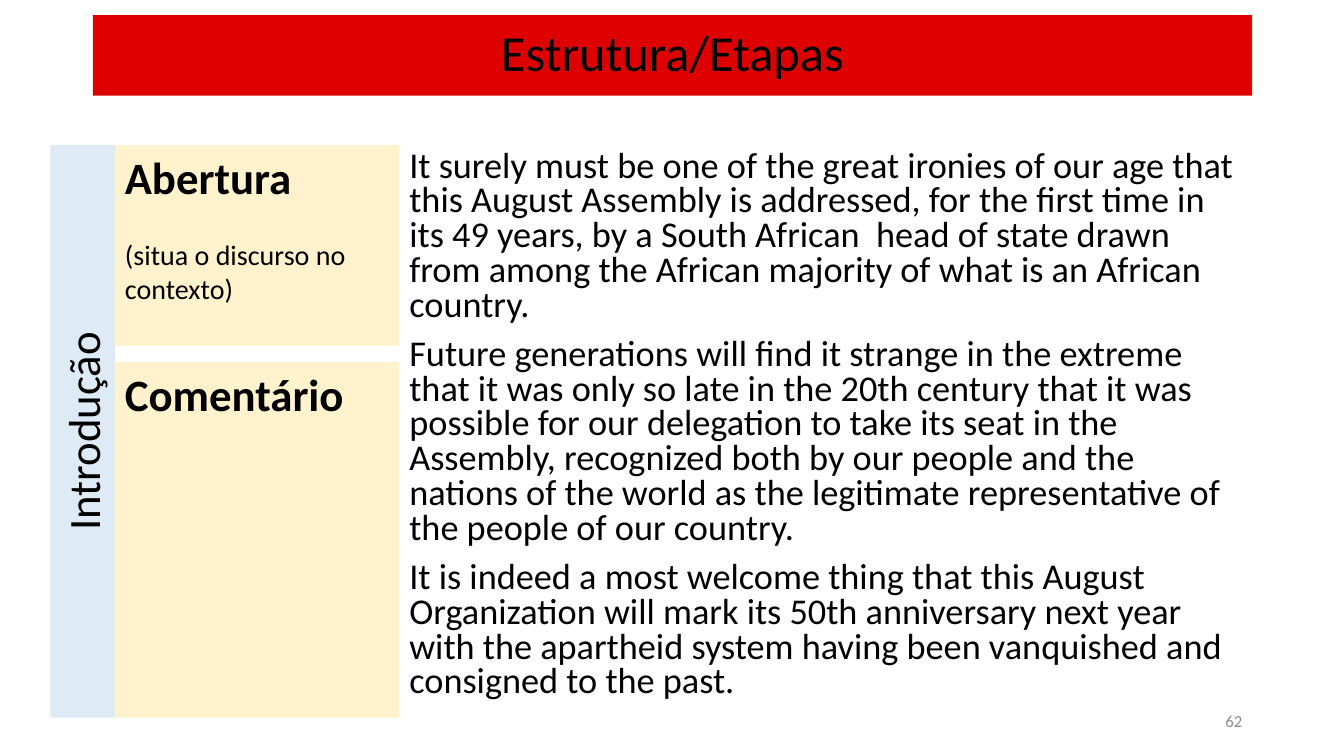
from lxml.etree import SubElement
from pptx import Presentation
from pptx.dml.color import RGBColor
from pptx.enum.shapes import MSO_SHAPE
from pptx.enum.text import MSO_ANCHOR, MSO_AUTO_SIZE, PP_ALIGN
from pptx.oxml.ns import qn
from pptx.util import Pt

PX = 9144  # EMU per px, 100 px to the inch
BLACK = RGBColor(0x00, 0x00, 0x00)
GREY = RGBColor(0x8C, 0x8C, 0x8C)
RED = RGBColor(0xDE, 0x00, 0x00)
PALE_BLUE = RGBColor(0xDE, 0xEB, 0xF7)
CREAM = RGBColor(0xFF, 0xF2, 0xCC)

SPEECH = [
    "It surely must be one of the great ironies of our age that this August "
    "Assembly is addressed, for the first time in its 49 years, by a South "
    "African  head of state drawn from among the African majority of what is "
    "an African country.",
    "Future generations will find it strange in the extreme that it was only "
    "so late in the 20th century that it was possible for our delegation to "
    "take its seat in the Assembly, recognized both by our people and the "
    "nations of the world as the legitimate representative of the people of "
    "our country.",
    "It is indeed a most welcome thing that this August Organization will "
    "mark its 50th anniversary next year with the apartheid system having "
    "been vanquished and consigned to the past.",
]


def write(paragraph, text, size=32, color=BLACK, bold=False,
          align=PP_ALIGN.LEFT, line=1.0, before=0):
    paragraph.alignment = align
    paragraph.line_spacing = line
    paragraph.space_before = Pt(before)
    run = paragraph.add_run()
    run.text = text
    font = run.font
    font.name, font.size, font.bold = "Calibri", Pt(size), bold
    font.color.rgb = color


class StructureSlide:
    def __init__(self, deck):
        self.slide = deck.slides.add_slide(deck.slide_layouts[1])

    def prepare(self, shape, box, anchor=MSO_ANCHOR.TOP):
        shape.left, shape.top, shape.width, shape.height = (n * PX for n in box)
        frame = shape.text_frame
        frame.word_wrap = True
        frame.auto_size = MSO_AUTO_SIZE.NONE
        frame.vertical_anchor = anchor
        return frame

    def title(self, text, box):
        heading = self.slide.shapes.title
        heading.fill.solid()
        heading.fill.fore_color.rgb = RED
        frame = self.prepare(heading, box, MSO_ANCHOR.MIDDLE)
        write(frame.paragraphs[0], text, size=36, align=PP_ALIGN.CENTER, line=0.9)

    def body(self, passages, box):
        frame = self.prepare(self.slide.placeholders[1], box)
        for index, passage in enumerate(passages):
            paragraph = frame.add_paragraph() if index else frame.paragraphs[0]
            write(paragraph, passage, size=25.9, line=0.8, before=10)
            properties = paragraph._p.get_or_add_pPr()
            properties.set("marL", "0")
            properties.set("indent", "0")
            SubElement(properties, qn("a:buNone"))

    def panel(self, text, box, color, rotation=0, **style):
        panel = self.slide.shapes.add_shape(MSO_SHAPE.RECTANGLE, 0, 0, PX, PX)
        panel.shadow.inherit = False
        panel.fill.solid()
        panel.fill.fore_color.rgb = color
        panel.line.fill.background()
        panel.rotation = rotation
        frame = self.prepare(panel, box)
        write(frame.paragraphs[0], text, **style)
        return frame

    def page_number(self, text, box):
        number = self.slide.shapes.add_textbox(0, 0, PX, PX)
        frame = self.prepare(number, box, MSO_ANCHOR.MIDDLE)
        write(frame.paragraphs[0], text, size=12, color=GREY, align=PP_ALIGN.RIGHT)


def main():
    deck = Presentation()
    deck.slide_width, deck.slide_height = 1333 * PX, 750 * PX
    page = StructureSlide(deck)

    # Heading and speech
    page.title("Estrutura/Etapas", (92, 15, 1150, 80))
    page.body(SPEECH, (396, 144, 846, 582))

    # Section band, turned to read upwards
    page.panel("Introdução", (-202, 396, 568, 64), PALE_BLUE, rotation=270,
               align=PP_ALIGN.CENTER)

    # Stages of the introduction
    opening = page.panel("Abertura", (114, 144, 282, 199), CREAM, bold=True)
    write(opening.add_paragraph(), "(situa o discurso no contexto)",
          size=20, before=24)
    page.panel("Comentário", (114, 359, 282, 353), CREAM, bold=True)

    page.page_number("62", (942, 695, 300, 40))
    deck.save("out.pptx")


if __name__ == "__main__":
    main()
